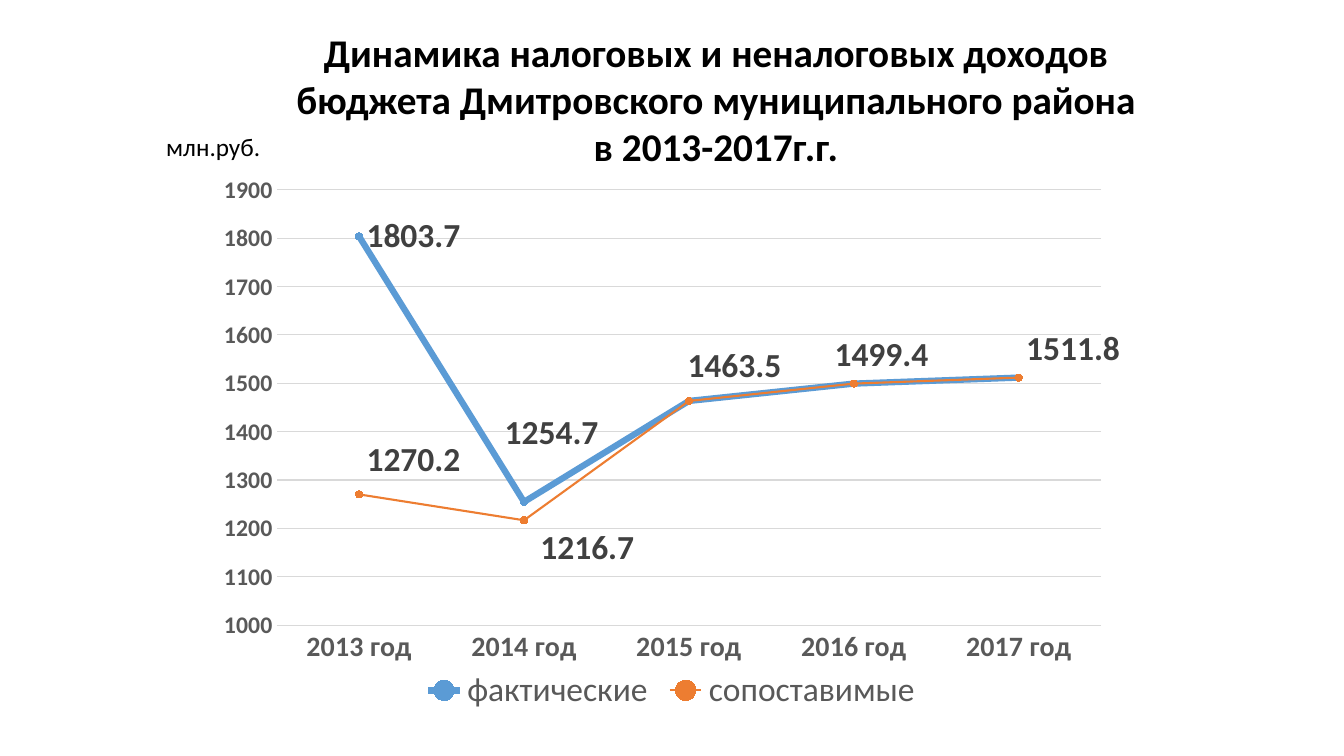
from dataclasses import dataclass

from lxml.etree import SubElement
from pptx import Presentation
from pptx.chart.chart import Chart
from pptx.chart.data import CategoryChartData
from pptx.chart.series import LineSeries
from pptx.dml.color import RGBColor
from pptx.enum.chart import (XL_CHART_TYPE, XL_LABEL_POSITION, XL_LEGEND_POSITION,
                             XL_MARKER_STYLE, XL_TICK_MARK)
from pptx.enum.text import MSO_ANCHOR, MSO_AUTO_SIZE, PP_ALIGN
from pptx.oxml.ns import qn
from pptx.shapes.autoshape import Shape
from pptx.text.text import Font
from pptx.util import Inches, Pt

WIDTH, HEIGHT = Inches(13.33), Inches(7.5)
FONT = "Calibri"
COLORS = {
    "text": "000000", "axis": "595959", "label": "404040", "grid": "D9D9D9",
    "actual": "5B9BD5", "actual marker": "1F4E79", "comparable": "ED7D31",
}
YEARS = [f"{year} год" for year in range(2013, 2018)]


@dataclass(frozen=True)
class Box:
    """Place on the slide in inches."""
    left: float
    top: float
    width: float
    height: float

    def lengths(self) -> tuple[int, int, int, int]:
        return Inches(self.left), Inches(self.top), Inches(self.width), Inches(self.height)


@dataclass(frozen=True)
class RevenueLine:
    """One series; label_shifts maps a point to its label's shift in shares of the chart."""
    name: str
    values: tuple[float, ...]
    color: str
    marker_color: str
    line_width: float
    label_shifts: dict[int, tuple[float, float]]


TITLE_BOX = Box(2.8, 0.23, 8.6, 1.51)
UNIT_BOX = Box(1.55, 1.25, 1.25, 0.4)
CHART_BOX = Box(2.22, 1.49, 8.89, 5.63)
PLOT_SHARES = {"x": 0.058, "y": 0.07, "w": 0.923, "h": 0.767}

REVENUES = [
    RevenueLine("фактические", (1803.7, 1254.7, 1463.5, 1499.4, 1511.8),
                "actual", "actual marker", 4.5, {0: (0, 0), 1: (-0.03, -0.12)}),
    RevenueLine("сопоставимые", (1270.2, 1216.7, 1463.5, 1499.4, 1511.8),
                "comparable", "comparable", 1.5,
                {0: (0, -0.06), 1: (0.01, 0.05), 2: (-0.01, -0.06),
                 3: (-0.03, -0.05), 4: (0, -0.05)}),
]


def rgb(name: str) -> RGBColor:
    return RGBColor.from_string(COLORS[name])


def style_font(font: Font, size: float, color: str, bold: bool = False) -> None:
    font.name, font.size, font.bold = FONT, Pt(size), bold
    font.color.rgb = rgb(color)


def write_text(shape: Shape, box: Box, text: str, size: float,
               align: PP_ALIGN, bold: bool = False) -> None:
    shape.left, shape.top, shape.width, shape.height = box.lengths()
    frame = shape.text_frame
    frame.text = text
    frame.word_wrap = True
    frame.auto_size = MSO_AUTO_SIZE.NONE
    frame.vertical_anchor = MSO_ANCHOR.TOP
    para = frame.paragraphs[0]
    para.alignment = align
    style_font(para.runs[0].font, size, "text", bold)


def add_manual_layout(layout, shares: dict[str, float], inner: bool = False) -> None:
    manual = SubElement(layout, qn("c:manualLayout"))
    if inner:
        settings = {"layoutTarget": "inner", "xMode": "edge", "yMode": "edge", **shares}
    else:
        settings = shares
    for tag, value in settings.items():
        SubElement(manual, qn(f"c:{tag}")).set("val", str(value))


def place_plot(chart: Chart) -> None:
    area = chart._chartSpace.chart.plotArea
    layout = area.find(qn("c:layout"))
    if layout is None:
        layout = SubElement(area, qn("c:layout"))
        area.insert(0, layout)
    add_manual_layout(layout, PLOT_SHARES, inner=True)


def style_axes(chart: Chart) -> None:
    for axis, size in ((chart.category_axis, 20), (chart.value_axis, 17)):
        axis.major_tick_mark = axis.minor_tick_mark = XL_TICK_MARK.NONE
        style_font(axis.tick_labels.font, size, "axis", bold=True)
    values = chart.value_axis
    values.minimum_scale, values.maximum_scale, values.major_unit = 1000, 1900, 100
    values.tick_labels.number_format = "General"
    values.tick_labels.number_format_is_linked = False
    values.format.line.fill.background()
    for line in (chart.category_axis.format.line, values.major_gridlines.format.line):
        line.color.rgb = rgb("grid")
        line.width = Pt(0.75)


def style_series(series: LineSeries, revenue: RevenueLine) -> None:
    series.smooth = False
    series.format.line.color.rgb = rgb(revenue.color)
    series.format.line.width = Pt(revenue.line_width)
    marker = series.marker
    marker.style, marker.size = XL_MARKER_STYLE.CIRCLE, 5
    marker.format.fill.solid()
    marker.format.fill.fore_color.rgb = rgb(revenue.marker_color)
    marker.format.line.color.rgb = rgb(revenue.color)

    labels = series.data_labels
    labels.show_value = False
    style_font(labels.font, 24, "label", bold=True)
    for point, (right, down) in revenue.label_shifts.items():
        label = series.points[point].data_label
        style_font(label.font, 24, "label", bold=True)
        label.position = XL_LABEL_POSITION.RIGHT
        element = labels._element.findall(qn("c:dLbl"))[-1]
        layout = SubElement(element, qn("c:layout"))
        element.insert(1, layout)
        add_manual_layout(layout, {"x": right, "y": down})
    leader_lines = labels._element.find(qn("c:showLeaderLines"))
    if leader_lines is not None:
        leader_lines.set("val", "0")


def add_revenue_chart(page) -> None:
    data = CategoryChartData(number_format="General")
    data.categories = YEARS
    for revenue in REVENUES:
        data.add_series(revenue.name, revenue.values)
    chart = page.shapes.add_chart(
        XL_CHART_TYPE.LINE_MARKERS, *CHART_BOX.lengths(), data).chart
    chart.has_title = False
    style_font(chart.font, 17, "text")
    chart.has_legend = True
    chart.legend.position = XL_LEGEND_POSITION.BOTTOM
    chart.legend.include_in_layout = False
    style_font(chart.legend.font, 24, "axis")
    plot = chart.plots[0]
    plot.vary_by_categories = False
    place_plot(chart)
    style_axes(chart)
    for series, revenue in zip(plot.series, REVENUES):
        style_series(series, revenue)


def main() -> None:
    deck = Presentation()
    deck.slide_width, deck.slide_height = WIDTH, HEIGHT
    page = deck.slides.add_slide(deck.slide_layouts.get_by_name("Title Only"))
    add_revenue_chart(page)
    write_text(page.shapes.title, TITLE_BOX,
               "Динамика налоговых и неналоговых доходов бюджета "
               "Дмитровского муниципального района в 2013-2017г.г.",
               28, PP_ALIGN.CENTER, bold=True)
    unit = page.shapes.add_textbox(*UNIT_BOX.lengths())
    write_text(unit, UNIT_BOX, "млн.руб.", 18, PP_ALIGN.LEFT)
    deck.save("out.pptx")


if __name__ == "__main__":
    main()
